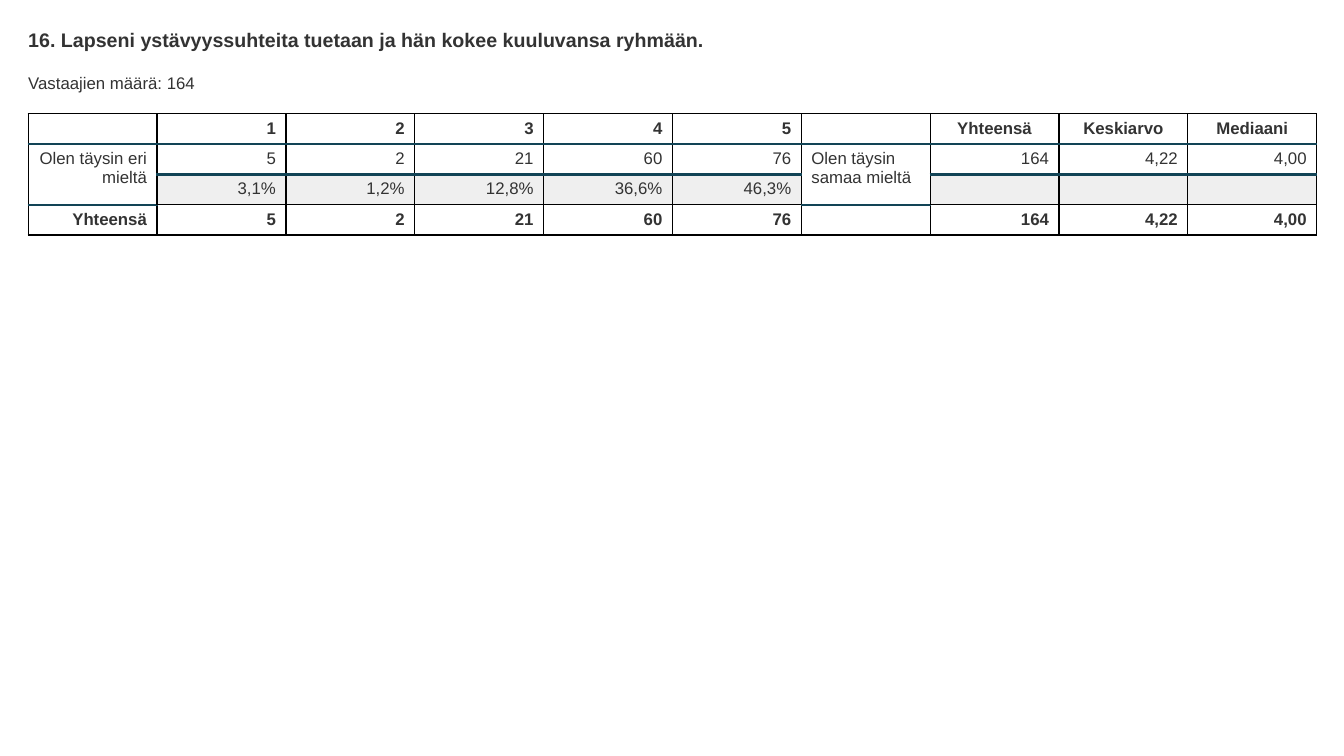
from pptx import Presentation
from pptx.dml.color import RGBColor
from pptx.enum.text import PP_ALIGN as Align
from pptx.oxml.xmlchemy import OxmlElement
from pptx.util import Inches, Pt

TITLE = "16. Lapseni ystävyyssuhteita tuetaan ja hän kokee kuuluvansa ryhmään."
RESPONDENTS = "Vastaajien määrä: 164"
ROWS = [
    ["", "1", "2", "3", "4", "5", "", "Yhteensä", "Keskiarvo", "Mediaani"],
    ["Olen täysin eri mieltä", "5", "2", "21", "60", "76",
     "Olen täysin samaa mieltä", "164", "4,22", "4,00"],
    ["", "3,1%", "1,2%", "12,8%", "36,6%", "46,3%", "", "", "", ""],
    ["Yhteensä", "5", "2", "21", "60", "76", "", "164", "4,22", "4,00"],
]
COLORS = {"text": "333333", "rule": "124456", "grid": "000000", "share": "EFEFEF"}
LABEL_COLS = (0, 6)
LEFT, WIDTH, ROW_H = 0.28, 12.78, 0.3
HEADER, COUNT, SHARE, TOTAL = range(4)


def style(p, size, bold):
    p.font.name = "Arial"
    p.font.size = Pt(size)
    p.font.bold = bold
    p.font.color.rgb = RGBColor.from_string(COLORS["text"])


def add_line(s, text, top, height, size, bold):
    box = s.shapes.add_textbox(Inches(LEFT), Inches(top), Inches(WIDTH), Inches(height))
    tf = box.text_frame
    tf.word_wrap = True
    tf.margin_left = tf.margin_right = tf.margin_top = tf.margin_bottom = 0
    tf.text = text
    style(tf.paragraphs[0], size, bold)


def add_border(props, side, color, width):
    ln = OxmlElement(f"a:ln{side}")
    ln.set("w", str(Pt(width)))
    fill = OxmlElement("a:solidFill")
    rgb = OxmlElement("a:srgbClr")
    rgb.set("val", color)
    fill.append(rgb)
    ln.append(fill)
    props.append(ln)


def format_cell(cell, row, col, text):
    props = cell._tc.get_or_add_tcPr()
    ruled = {HEADER: "B", COUNT: "TB", SHARE: "B" if col in LABEL_COLS else "T", TOTAL: ""}
    for side in "LRTB":
        if side in ruled[row]:
            add_border(props, side, COLORS["rule"], 2)
        else:
            add_border(props, side, COLORS["grid"], 1)
    if row == SHARE and col not in LABEL_COLS:
        cell.fill.solid()
        cell.fill.fore_color.rgb = RGBColor.from_string(COLORS["share"])
    else:
        cell.fill.background()
    p = cell.text_frame.paragraphs[0]
    if text:
        p.text = text
    else:
        end = OxmlElement("a:endParaRPr")
        end.set("sz", "1200")
        p._p.append(end)
    style(p, 12, row in (HEADER, TOTAL))
    if row == HEADER and col > LABEL_COLS[1]:
        p.alignment = Align.CENTER
    elif col == LABEL_COLS[1]:
        p.alignment = Align.LEFT
    else:
        p.alignment = Align.RIGHT


def add_results(s):
    n_rows, n_cols = len(ROWS), len(ROWS[0])
    table = s.shapes.add_table(n_rows, n_cols, Inches(LEFT), Inches(1.13),
                               Inches(WIDTH), Inches(ROW_H * n_rows)).table
    table.first_row = table.horz_banding = False
    for r in table.rows:
        r.height = Inches(ROW_H)
    for i, row in enumerate(ROWS):
        for j, text in enumerate(row):
            format_cell(table.cell(i, j), i, j, text)
    for j in LABEL_COLS:
        table.cell(COUNT, j).merge(table.cell(SHARE, j))


def main():
    prs = Presentation()
    prs.slide_width, prs.slide_height = Inches(13.33), Inches(7.5)
    s = prs.slides.add_slide(prs.slide_layouts[6])
    add_line(s, TITLE, 0.28, 0.23, 14, True)
    add_line(s, RESPONDENTS, 0.72, 0.2, 12, False)
    add_results(s)
    prs.save("out.pptx")


if __name__ == "__main__":
    main()
